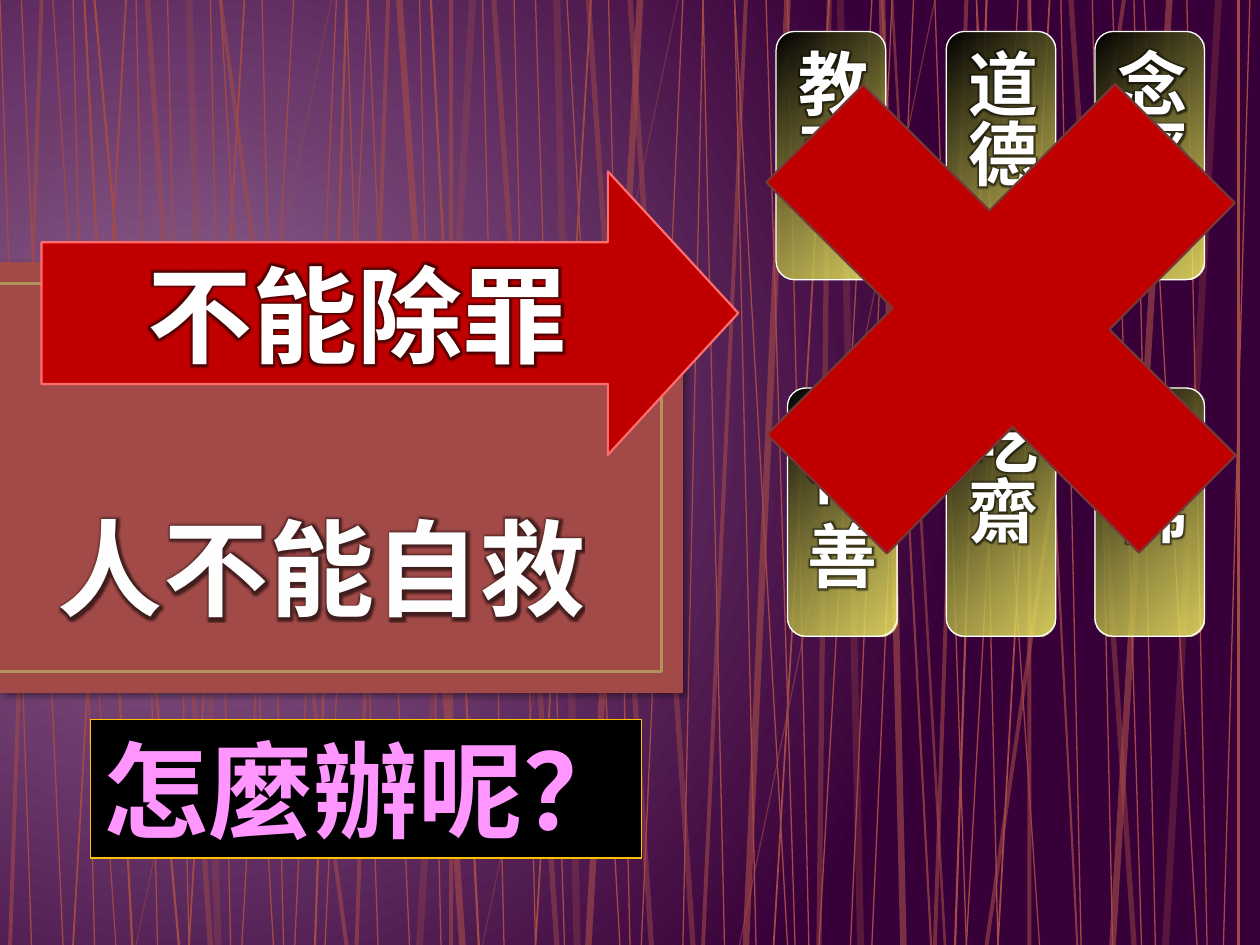
from dataclasses import dataclass

from pptx import Presentation
from pptx import oxml
from pptx.dml.color import RGBColor
from pptx.enum import shapes, text
from pptx.oxml import ns
from pptx.util import Inches, Pt


@dataclass(frozen=True)
class Theme:
    glow: str = "946894"
    night: str = "380038"
    brick: str = "A24A48"
    gold: str = "B2935C"
    red: str = "C00000"
    cross_edge: str = "783735"
    arrow_edge: str = "FF6D6D"
    question_edge: str = "FFC000"
    pink: str = "FF96FF"
    title: str = "FEFEFE"
    white: str = "FFFFFF"
    black: str = "000000"
    yellow: str = "FFFF66"
    display: str = "Cabin"
    serif: str = "Times New Roman"
    sans: str = "Arial"
    big: int = 60
    card: int = 40


T = Theme()
SHAPE = shapes.MSO_SHAPE
CENTER = text.PP_ALIGN.CENTER
LEFT = text.PP_ALIGN.LEFT
MIDDLE = text.MSO_ANCHOR.MIDDLE

# Each key is (width in points, opacity); each pair is (top x, bottom x).
STRANDS = {
    (0.75, 100): [
        (2.08, 2.25), (1.75, 2.17), (2.33, 1.92), (0, 0.25), (0.17, 0.5),
        (1.67, 1.83), (0.58, 0.75), (2.67, 2.34), (2.92, 2.58), (1.08, 1.25),
        (1.33, 1.5), (4.83, 5), (4.5, 4.92), (2.75, 3), (2.92, 3.25),
        (3.33, 3.5), (5.42, 5.09), (5.58, 5.42), (4.25, 4.48), (3.83, 4),
        (4.08, 4.25), (5.83, 6.25), (6.92, 6.5), (6.25, 6.42), (7.25, 6.92),
        (7.08, 6.75), (6.08, 6.31), (5.58, 5.75), (5.83, 6), (7.42, 7.67),
        (7.75, 7.92), (8.42, 8.58), (8.67, 8.83), (9.42, 9.58), (9.08, 9.5),
        (9, 9.17), (9.92, 9.71), (8.83, 9.06), (8.08, 7.67)],
    (0.75, 90): [(0.42, 0.92), (7.75, 8.25)],
    (0.75, 56): [(7.42, 5.87)],
    (0.75, 39): [(2.63, 1.08), (5.38, 3.83)],
    (1, 100): [(1, 0.58), (1.94, 1.5), (4.69, 4.25), (6.58, 6.14), (8.33, 7.92)],
    (1.25, 100): [(0.75, 1.42), (0.67, 1.05), (2.75, 2.5), (3.42, 3.8),
                  (7.83, 7.58), (9.83, 9.83)],
    (1.25, 72): [(8.17, 8.55), (7, 7.39)],
    (1.5, 58): [(7.08, 7.5)],
    (2.25, 58): [(0.33, 0.08), (1.75, 2.75), (3.08, 2.83), (3.58, 3.58),
                 (5.92, 5.58), (7.67, 7.42), (8.17, 8.17), (8.92, 7.83)],
    (3, 47): [(1.17, 1.67), (3.92, 4.42), (4.67, 5.17), (8.5, 9),
              (6.58, 6.5), (5, 5.5)],
    (3.75, 63): [(5.08, 4.67), (3.17, 3.67), (9.28, 8.83), (7, 7.17), (6.25, 5.92)],
    (4, 30): [(1.5, 1.73), (3.75, 3.33), (4.42, 4.58), (6.67, 6.83), (9.67, 9.25)],
}


def rgb(color):
    return RGBColor.from_string(color)


def add_xml(parent, tag, **attrs):
    el = oxml.xmlchemy.OxmlElement(tag)
    for name, value in attrs.items():
        el.set(name, str(value))
    parent.append(el)
    return el


def add_color(parent, color, opacity):
    clr = add_xml(parent, "a:srgbClr", val=color)
    add_xml(clr, "a:alpha", val=opacity * 1000)


def set_opacity(el, *values):
    for clr, value in zip(el.iter(ns.qn("a:srgbClr")), values):
        add_xml(clr, "a:alpha", val=value * 1000)


def set_gradient(fill, *colors):
    fill.gradient()
    for stop, color in zip(fill.gradient_stops, colors):
        stop.color.rgb = rgb(color)


def add_line(s, start, end, color, width, opacity=100):
    line = s.shapes.add_connector(shapes.MSO_CONNECTOR.STRAIGHT,
                                  *(Inches(v) for v in start + end))
    line.line.color.rgb = rgb(color)
    line.line.width = Pt(width)
    spPr = line._element.spPr
    if opacity < 100:
        set_opacity(spPr, opacity)
    add_xml(spPr, "a:effectLst")


def add_box(s, kind, box, fill=None, line=None, width=1.25, adj=()):
    sp = s.shapes.add_shape(kind, *(Inches(v) for v in box))
    sp.shadow.inherit = False
    for i, value in enumerate(adj):
        sp.adjustments[i] = value
    if fill:
        sp.fill.solid()
        sp.fill.fore_color.rgb = rgb(fill)
    if line:
        sp.line.color.rgb = rgb(line)
        sp.line.width = Pt(width)
    else:
        sp.line.fill.background()
    return sp


def write(sp, *lines, font, size, color, align=CENTER, anchor=MIDDLE,
          wrap=True, glow=True, spacing=None):
    tf = sp.text_frame
    tf.word_wrap = wrap
    tf.vertical_anchor = anchor
    for i, line in enumerate(lines):
        p = tf.add_paragraph() if i else tf.paragraphs[0]
        p.alignment = align
        r = p.add_run()
        r.text = line
        r.font.size = Pt(size)
        r.font.bold = True
        r.font.color.rgb = rgb(color)
        rPr = r._r.get_or_add_rPr()
        if glow:
            effects = add_xml(rPr, "a:effectLst")
            add_color(add_xml(effects, "a:glow", rad=Pt(4)), T.black, 60)
        if spacing:
            rPr.set("spc", str(spacing))
        r.font.name = font
    return tf


def draw_background(s, box):
    left, top, width, height = box
    fill = s.background.fill
    set_gradient(fill, T.glow, T.night)
    lin = next(s._element.iter(ns.qn("a:lin")))
    grad = lin.getparent()
    grad.remove(lin)
    ring = add_xml(grad, "a:path", path="circle")
    add_xml(ring, "a:fillToRect", l=15000, t=50000, r=85000, b=60000)
    for (weight, opacity), strands in STRANDS.items():
        for x1, x2 in strands:
            add_line(s, (left + x1, top), (left + x2, top + height),
                     T.brick, weight, opacity)


def draw_title_panel(s, box):
    left, top, width, height = box
    panel = add_box(s, SHAPE.RECTANGLE, box, T.brick)
    effects = panel._element.spPr.find(ns.qn("a:effectLst"))
    shadow = add_xml(effects, "a:outerShdw", blurRad=Pt(4), dist=Pt(3), dir=45 * 60000)
    add_color(shadow, T.black, 40)
    right, upper, lower = left + width - 0.17, top + 0.17, top + height - 0.17
    corners = [(left, upper), (right, upper), (right, lower), (left, lower)]
    for start, end in zip(corners, corners[1:]):
        add_line(s, start, end, T.gold, 1.5)

    title = s.shapes.title
    s.shapes._spTree.append(title._element)
    title.left, title.top = Inches(left + 0.36), Inches(top + 1.81)
    title.width, title.height = Inches(4.83), Inches(1.16)
    tf = write(title, "人不能自救", font=T.display, size=T.big, color=T.title,
               align=LEFT, anchor=text.MSO_ANCHOR.BOTTOM, spacing=40)
    tf.auto_size = text.MSO_AUTO_SIZE.NONE


def draw_card(s, box, *lines):
    sp = add_box(s, SHAPE.ROUNDED_RECTANGLE, box, line=T.white, width=0, adj=[0.167])
    set_gradient(sp.fill, T.black, T.yellow)
    sp.fill.gradient_angle = 315
    set_opacity(sp._element.spPr.find(ns.qn("a:gradFill")), 97, 78)
    tf = write(sp, *lines, font=T.serif, size=T.card, color=T.white, wrap=False)
    if len(lines) == 1:
        tf._txBody.bodyPr.set("vert", "eaVert")


def draw_deeds(s, box):
    left, top, width, height = box
    w, h = 0.87, 1.97
    rows = [
        (top + height - h, [(0.09, ("行", "善")), (1.35, ("吃齋",)), (2.53, ("拜佛",))]),
        (top, [(0, ("教育",)), (1.35, ("道德",)), (2.53, ("念經",))]),
    ]
    for y, cards in rows:
        for dx, lines in cards:
            draw_card(s, (left + dx, y, w, h), *lines)


def draw_cross(s, box):
    cross = add_box(s, SHAPE.CROSS, box, T.red, T.cross_edge, adj=[0.361])
    cross.rotation = 44.8


def draw_arrow(s, box):
    sp = add_box(s, SHAPE.RIGHT_ARROW, box, T.red, T.arrow_edge, adj=[0.5, 0.46])
    write(sp, "不能除罪", font=T.display, size=T.big, color=T.white)


def draw_question(s, box):
    sp = add_box(s, SHAPE.RECTANGLE, box, T.black, T.question_edge, 0.75)
    tf = write(sp, "怎麼辦呢？", font=T.sans, size=T.big, color=T.pink, align=LEFT,
               anchor=text.MSO_ANCHOR.TOP, wrap=False, glow=False)
    tf.auto_size = text.MSO_AUTO_SIZE.SHAPE_TO_FIT_TEXT


def main():
    prs = Presentation()
    prs.slide_width, prs.slide_height = Inches(10), Inches(7.5)
    s = prs.slides.add_slide(prs.slide_layouts[5])
    draw_background(s, (0, 0, 10, 7.5))
    draw_title_panel(s, (0, 2.08, 5.42, 3.42))
    draw_deeds(s, (6.16, 0.25, 3.4, 4.8))
    draw_cross(s, (5.86, 0.57, 4.17, 3.92))
    draw_arrow(s, (0.33, 1.36, 5.53, 2.25))
    draw_question(s, (0.72, 5.71, 4.37, 1.1))
    prs.save("out.pptx")


if __name__ == "__main__":
    main()
